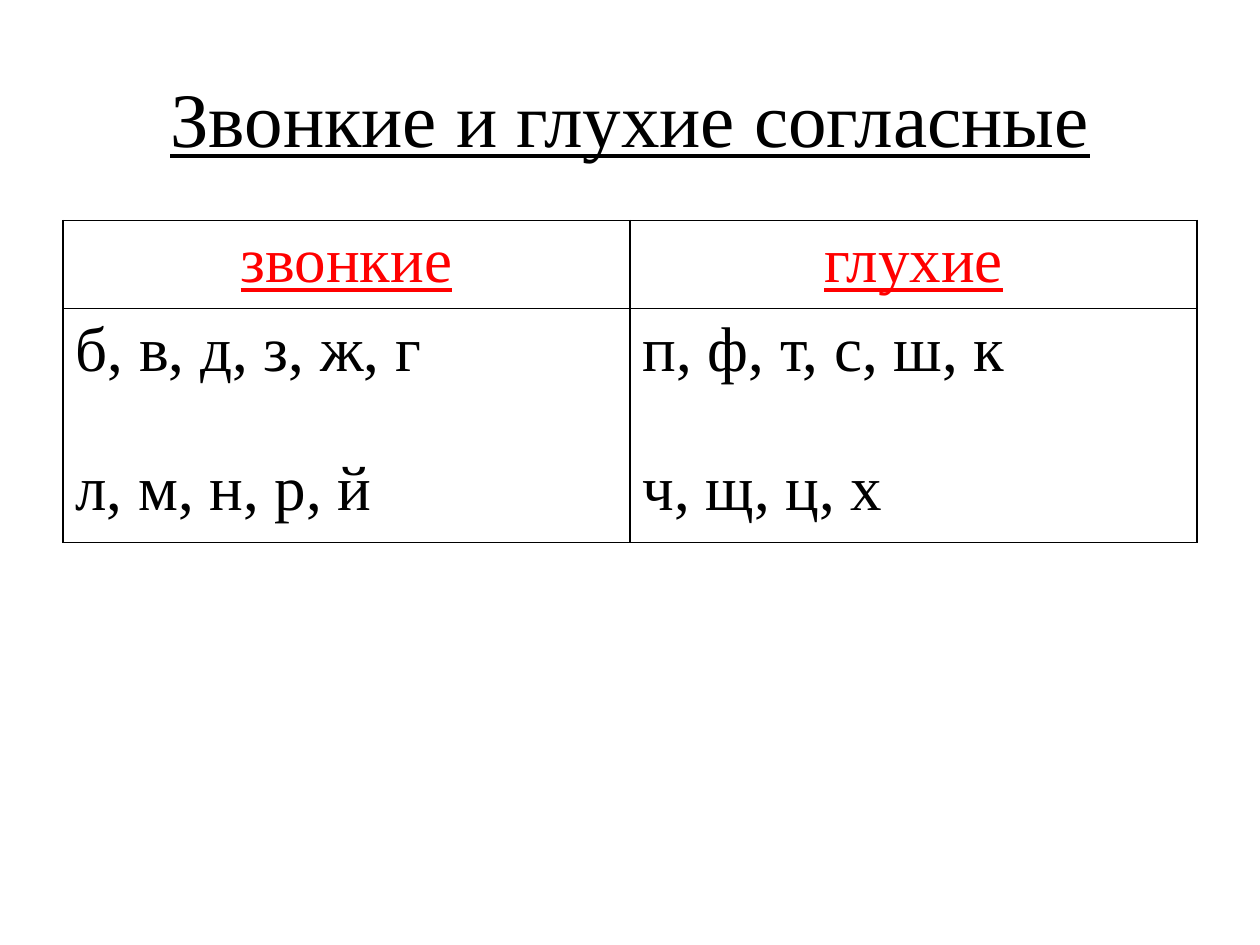
"""Builds a slide comparing voiced and voiceless Russian consonants."""
from lxml import etree
from pptx import Presentation
from pptx.dml.color import RGBColor
from pptx.enum.text import MSO_ANCHOR, PP_ALIGN
from pptx.oxml.ns import qn
from pptx.util import Inches, Pt

CENTER, LEFT = PP_ALIGN.CENTER, PP_ALIGN.LEFT
MIDDLE = MSO_ANCHOR.MIDDLE
COLORS = {"ink": "000000", "header": "FF0000", "paper": "FFFFFF"}
CONSONANTS = {
    "звонкие": ["б, в, д, з, ж, г", "л, м, н, р, й"],
    "глухие": ["п, ф, т, с, ш, к", "ч, щ, ц, х"],
}


class Deck:
    font = "Times New Roman"
    unit = Inches(0.25)

    def __init__(self, prs):
        self.slide = prs.slides.add_slide(prs.slide_layouts[6])

    def grid(self, *cells):
        return [int(n * self.unit) for n in cells]

    def set_lines(self, tf, lines, size, color="ink", align=LEFT, underline=False, gap=0):
        for i, line in enumerate(lines):
            p = tf.paragraphs[0] if i == 0 else tf.add_paragraph()
            p.text = line
            p.alignment = align
            p.space_before = Pt(gap if i else 0)
            f = p.runs[0].font
            f.name, f.size, f.underline = self.font, Pt(size), underline
            f.bold = False
            f.color.rgb = RGBColor.from_string(COLORS[color])

    def title(self, text, *box):
        tf = self.slide.shapes.add_textbox(*self.grid(*box)).text_frame
        tf.word_wrap = True
        tf.vertical_anchor = MIDDLE
        self.set_lines(tf, [text], 44, align=CENTER, underline=True)

    def border(self, cell):
        pr = cell._tc.get_or_add_tcPr()
        for i, side in enumerate(("a:lnL", "a:lnR", "a:lnT", "a:lnB")):
            ln = etree.Element(qn(side), w=str(Pt(1)))
            fill = etree.SubElement(ln, qn("a:solidFill"))
            etree.SubElement(fill, qn("a:srgbClr"), val=COLORS["ink"])
            pr.insert(i, ln)

    def table(self, groups, left, top, width, heights):
        box = self.grid(left, top, width, sum(heights))
        table = self.slide.shapes.add_table(len(heights), len(groups), *box).table
        for row, height in zip(table.rows, self.grid(*heights)):
            row.height = height
        for col, (name, lines) in enumerate(groups.items()):
            head, body = table.cell(0, col), table.cell(1, col)
            self.set_lines(head.text_frame, [name], 36, "header", CENTER, True)
            self.set_lines(body.text_frame, lines, 36, gap=40)
            for cell in (head, body):
                cell.fill.solid()
                cell.fill.fore_color.rgb = RGBColor.from_string(COLORS["paper"])
                self.border(cell)


def main():
    prs = Presentation()
    prs.slide_width, prs.slide_height = Inches(10), Inches(7.5)
    deck = Deck(prs)
    deck.title("Звонкие и глухие согласные", 2, 1.2, 36, 5)
    deck.table(CONSONANTS, 2, 7, 36, (2.64, 7.04))
    prs.save("out.pptx")


if __name__ == "__main__":
    main()
